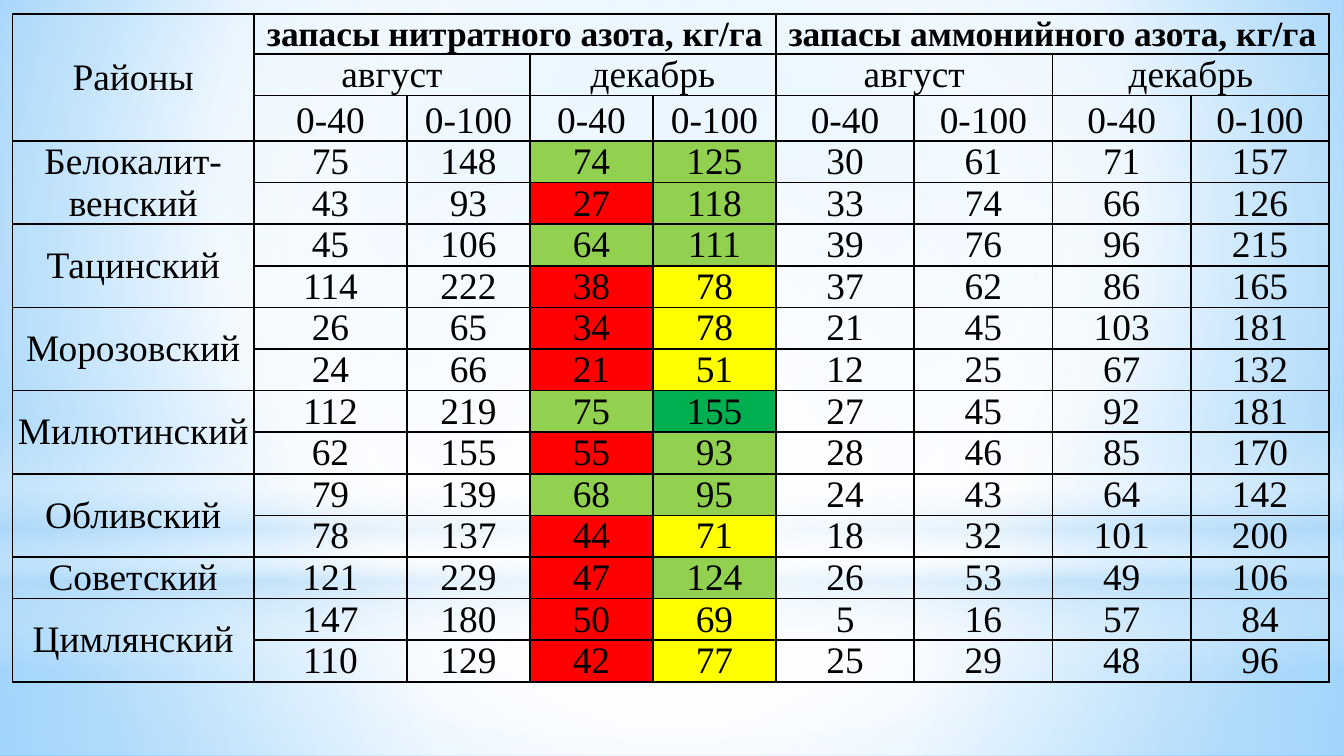
from pptx import Presentation
from pptx.dml.color import RGBColor
from pptx.enum import shapes, text
from pptx.oxml import parse_xml
from pptx.oxml.ns import nsdecls, qn
from pptx.util import Pt

# Content: district, then one (values, colours of the two December nitrate cells) per row
DISTRICTS = [
    ("Белокалит-венский", [([75, 148, 74, 125, 30, 61, 71, 157], "GG"),
                           ([43, 93, 27, 118, 33, 74, 66, 126], "RG")]),
    ("Тацинский", [([45, 106, 64, 111, 39, 76, 96, 215], "GG"),
                   ([114, 222, 38, 78, 37, 62, 86, 165], "RY")]),
    ("Морозовский", [([26, 65, 34, 78, 21, 45, 103, 181], "RY"),
                     ([24, 66, 21, 51, 12, 25, 67, 132], "RY")]),
    ("Милютинский", [([112, 219, 75, 155, 27, 45, 92, 181], "GD"),
                     ([62, 155, 55, 93, 28, 46, 85, 170], "RG")]),
    ("Обливский", [([79, 139, 68, 95, 24, 43, 64, 142], "GG"),
                   ([78, 137, 44, 71, 18, 32, 101, 200], "RY")]),
    ("Советский", [([121, 229, 47, 124, 26, 53, 49, 106], "RG")]),
    ("Цимлянский", [([147, 180, 50, 69, 5, 16, 57, 84], "RY"),
                    ([110, 129, 42, 77, 25, 29, 48, 96], "RY")]),
]
STOCKS = ["запасы нитратного азота, кг/га", "запасы аммонийного азота, кг/га"]
MONTHS = ["август", "декабрь"]
DEPTHS = ["0-40", "0-100"]
FILLS = {"R": "FF0000", "Y": "FFFF00", "G": "92D050", "D": "00B050"}

# Geometry in points
WIDTH, HEIGHT = 720, 405
LEFT, TOP = 6.7, 7.6
COLUMNS = [129.4, 82] + [65.9] * 3 + [74.1] * 4
HEADER_ROWS, ROW = [21.4, 22.2, 24.4], 22.3

# Gradients: stops of (position, colour, opacity), focus rectangle or None for vertical
CENTRE = (50, 50, 50, 50)
BACKGROUND = [(0, "9ED5FF", 100), (60, "FFFFFF", 100), (100, "5BB9FF", 100)]
BACKDROP = [
    ("RECTANGLE", 302, 103,
     [(0, "FFFFFF", 91), (37, "FFFFFF", 76), (100, "B4DCFA", 79)], CENTRE),
    ("RECTANGLE", 0, 302,
     [(0, "FFFFFF", 89), (48, "FFFFFF", 62), (100, "B4DCFA", 79)], CENTRE),
    ("RECTANGLE", 222.5, 135.4,
     [(0, "FFFFFF", 0), (29, "FFFFFF", 30), (45, "B4DCFA", 40),
      (55, "FFFFFF", 26), (65, "B4DCFA", 60), (100, "FFFFFF", 0)], None),
    ("OVAL", 94.3, 302, [(0, "FFFFFF", 100), (56, "FFFFFF", 0)], CENTRE),
]


def color(value):
    return RGBColor.from_string(value)


def set_gradient(props, stops, focus):
    """Swap the solid fill in props for a gradient."""
    gs = "".join(
        f'<a:gs pos="{pos * 1000}"><a:srgbClr val="{rgb}">'
        f'<a:alpha val="{alpha * 1000}"/></a:srgbClr></a:gs>'
        for pos, rgb, alpha in stops)
    if focus:
        edges = " ".join(f'{k}="{v * 1000}"' for k, v in zip("ltrb", focus))
        shade = f'<a:path path="circle"><a:fillToRect {edges}/></a:path>'
    else:
        shade = '<a:lin ang="5400000" scaled="0"/>'
    solid = props.find(qn("a:solidFill"))
    props.replace(solid, parse_xml(
        f'<a:gradFill {nsdecls("a")} rotWithShape="1">'
        f'<a:gsLst>{gs}</a:gsLst>{shade}</a:gradFill>'))


def format_cell(cell):
    """Thin black borders, no insets, no fill."""
    cell.margin_left = cell.margin_right = cell.margin_top = cell.margin_bottom = 0
    tcPr = cell._tc.get_or_add_tcPr()
    for side in "LRTB":
        tcPr.append(parse_xml(
            f'<a:ln{side} {nsdecls("a")} w="12700"><a:solidFill>'
            f'<a:srgbClr val="000000"/></a:solidFill></a:ln{side}>'))
    cell.fill.background()


def write(row, col, value, rows=1, cols=1, size=20, bold=False, anchor="BOTTOM", fill=None):
    cell = table.cell(row, col)
    if rows * cols > 1:
        cell.merge(table.cell(row + rows - 1, col + cols - 1))
    cell.vertical_anchor = text.MSO_ANCHOR[anchor]
    if fill:
        cell.fill.solid()
        cell.fill.fore_color.rgb = color(fill)
    p = cell.text_frame.paragraphs[0]
    p.alignment = text.PP_ALIGN.CENTER
    r = p.add_run()
    r.text = str(value)
    r.font.name, r.font.size, r.font.bold = "Times New Roman", Pt(size), bold
    r.font.color.rgb = color("000000")


prs = Presentation()
prs.slide_width, prs.slide_height = Pt(WIDTH), Pt(HEIGHT)
s = prs.slides.add_slide(prs.slide_layouts[6])

# Background and its glow layers
s.background.fill.solid()
set_gradient(s._element.find(".//" + qn("p:bgPr")), BACKGROUND, (20, 10, 20, 60))
for kind, top, height, stops, focus in BACKDROP:
    sp = s.shapes.add_shape(shapes.MSO_SHAPE[kind], 0, Pt(top), Pt(WIDTH), Pt(height))
    sp.shadow.inherit = False
    sp.line.fill.background()
    sp.fill.solid()
    set_gradient(sp._element.spPr, stops, focus)

# Table grid
heights = HEADER_ROWS + [ROW] * sum(len(rows) for _, rows in DISTRICTS)
table = s.shapes.add_table(len(heights), len(COLUMNS), Pt(LEFT), Pt(TOP),
                           Pt(sum(COLUMNS)), Pt(sum(heights))).table
table.first_row = table.horz_banding = False
for column, width in zip(table.columns, COLUMNS):
    column.width = Pt(width)
for row, height in zip(table.rows, heights):
    row.height = Pt(height)
for cell in table.iter_cells():
    format_cell(cell)

# Header
write(0, 0, "Районы", rows=3, anchor="MIDDLE")
for i, stock in enumerate(STOCKS):
    write(0, 1 + 4 * i, stock, cols=4, size=19, bold=True)
for i, month in enumerate(MONTHS * 2):
    write(1, 1 + 2 * i, month, cols=2, anchor="MIDDLE")
for i, depth in enumerate(DEPTHS * 4):
    write(2, 1 + i, depth)

# Districts
y = len(HEADER_ROWS)
for district, rows in DISTRICTS:
    write(y, 0, district, rows=len(rows), anchor="MIDDLE")
    for values, marks in rows:
        fills = dict(zip((3, 4), marks))
        for x, value in enumerate(values, 1):
            write(y, x, value, fill=FILLS.get(fills.get(x)))
        y += 1

prs.save("out.pptx")
